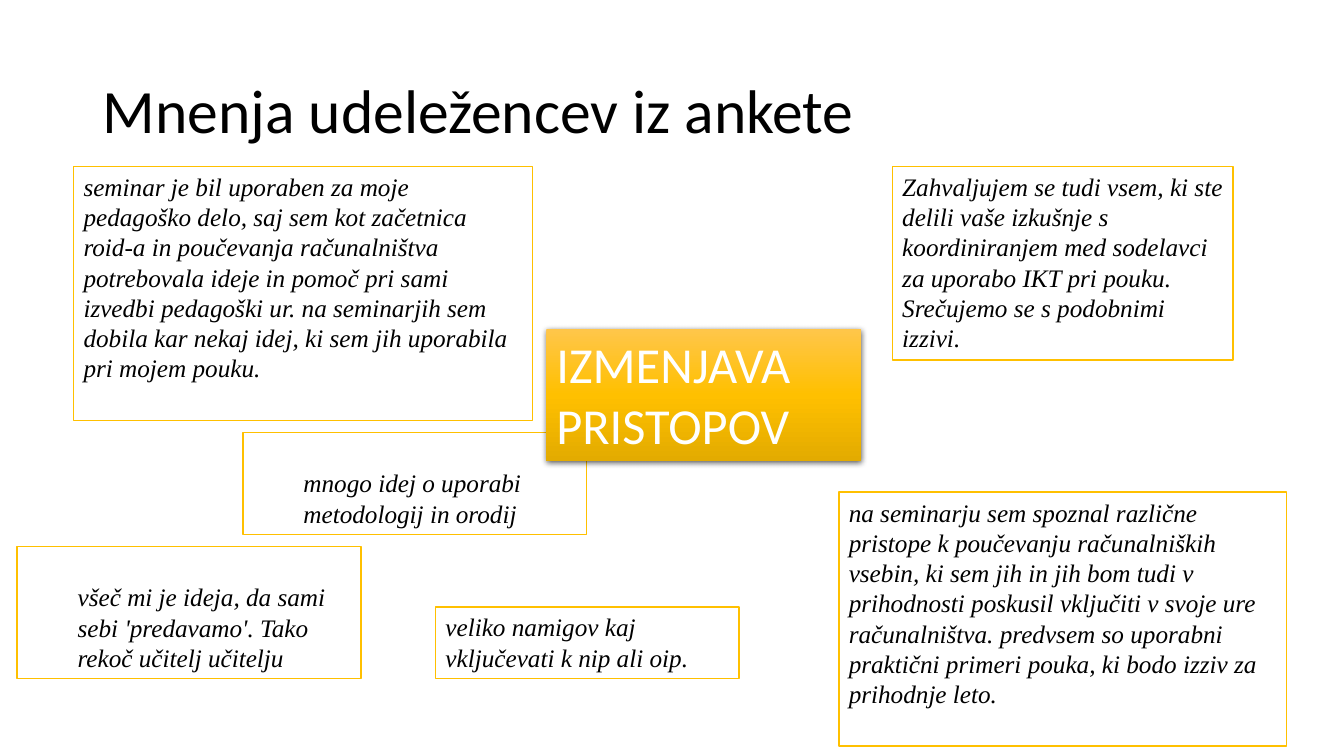
import copy

import lxml.etree
import pptx
import pptx.dml.color
import pptx.enum.shapes
import pptx.enum.text
import pptx.oxml.ns
import pptx.util

Inches = pptx.util.Inches
Pt = pptx.util.Pt
qn = pptx.oxml.ns.qn


def color(value):
    return pptx.dml.color.RGBColor.from_string(value)


def write(shape, text, font, size, text_color, italic=False):
    frame = shape.text_frame
    frame.word_wrap = True
    frame.vertical_anchor = pptx.enum.text.MSO_ANCHOR.TOP
    frame.text = text
    para = frame.paragraphs[0]
    para.alignment = pptx.enum.text.PP_ALIGN.LEFT
    span = para.runs[0]
    span.font.name = font
    span.font.size = Pt(size)
    span.font.italic = italic
    span.font.color.rgb = color(text_color)


deck = pptx.Presentation()
deck.slide_width = Inches(13.33)
deck.slide_height = Inches(7.5)
page = deck.slides.add_slide(deck.slide_layouts[6])

title = page.shapes.add_textbox(Inches(0.92), Inches(0.4), Inches(11.5), Inches(1.45))
write(title, "Mnenja udeležencev iz ankete", "Calibri", 44, "000000")
title.text_frame.vertical_anchor = pptx.enum.text.MSO_ANCHOR.MIDDLE
title.text_frame.paragraphs[0].line_spacing = 0.9

theme = "IZMENJAVA PRISTOPOV"
boxes = [
    (4.32, 6.02, 3.01, 0.71, False, "veliko namigov kaj vključevati k nip ali oip."),
    (2.41, 4.29, 3.41, 1.01, True, "mnogo idej o uporabi metodologij in orodij"),
    (8.32, 4.88, 4.44, 2.52, False,
     "na seminarju sem spoznal različne pristope k poučevanju računalniških vsebin, "
     "ki sem jih in jih bom tudi v prihodnosti poskusil vključiti v svoje ure "
     "računalništva. predvsem so uporabni praktični primeri pouka, ki bodo izziv za "
     "prihodnje leto."),
    (0.73, 1.65, 4.55, 2.52, False,
     "seminar je bil uporaben za moje pedagoško delo, saj sem kot začetnica roid-a "
     "in poučevanja računalništva potrebovala ideje in pomoč pri sami izvedbi "
     "pedagoški ur. na seminarjih sem dobila kar nekaj idej, ki sem jih uporabila "
     "pri mojem pouku."),
    (5.42, 3.26, 3.12, 1.31, False, theme),
    (8.85, 1.65, 3.38, 1.92, False,
     "Zahvaljujem se tudi vsem, ki ste delili vaše izkušnje s koordiniranjem med "
     "sodelavci za uporabo IKT pri pouku. Srečujemo se s podobnimi izzivi."),
    (0.17, 5.42, 3.41, 1.31, True,
     "všeč mi je ideja, da sami sebi 'predavamo'. Tako rekoč učitelj učitelju"),
]

for left, top, width, height, indented, text in boxes:
    box = page.shapes.add_shape(
        pptx.enum.shapes.MSO_SHAPE.RECTANGLE,
        Inches(left), Inches(top), Inches(width), Inches(height))
    box.shadow.inherit = False

    if text == theme:
        write(box, text, "Calibri", 36, "FFFFFF")
        box.line.fill.background()
        box.fill.gradient()
        box.fill.gradient_angle = 270
        first_stop = box._element.spPr.find(".//" + qn("a:gs"))
        first_stop.addnext(copy.deepcopy(first_stop))
        shades = [(0, "FFC64B"), (0.5, "FFC000"), (1, "E3AB00")]
        for stop, (position, shade) in zip(box.fill.gradient_stops, shades):
            stop.position = position
            stop.color.rgb = color(shade)
        effects = box._element.spPr.find(qn("a:effectLst"))
        shadow = lxml.etree.SubElement(
            effects, qn("a:outerShdw"), blurRad=str(Pt(4.5)), dist=str(Pt(1.5)),
            dir="5400000", algn="ctr", rotWithShape="0")
        shadow_color = lxml.etree.SubElement(shadow, qn("a:srgbClr"), val="000000")
        lxml.etree.SubElement(shadow_color, qn("a:alpha"), val="63000")
    else:
        write(box, text, "Times New Roman", 18, "000000", italic=True)
        box.fill.solid()
        box.fill.fore_color.rgb = color("FFFFFF")
        box.line.color.rgb = color("FFC000")
        box.line.width = Pt(1)
        if indented:
            box.text_frame.margin_left = Inches(0.6)
            box.text_frame.margin_top = Inches(0.35)

deck.save("out.pptx")
